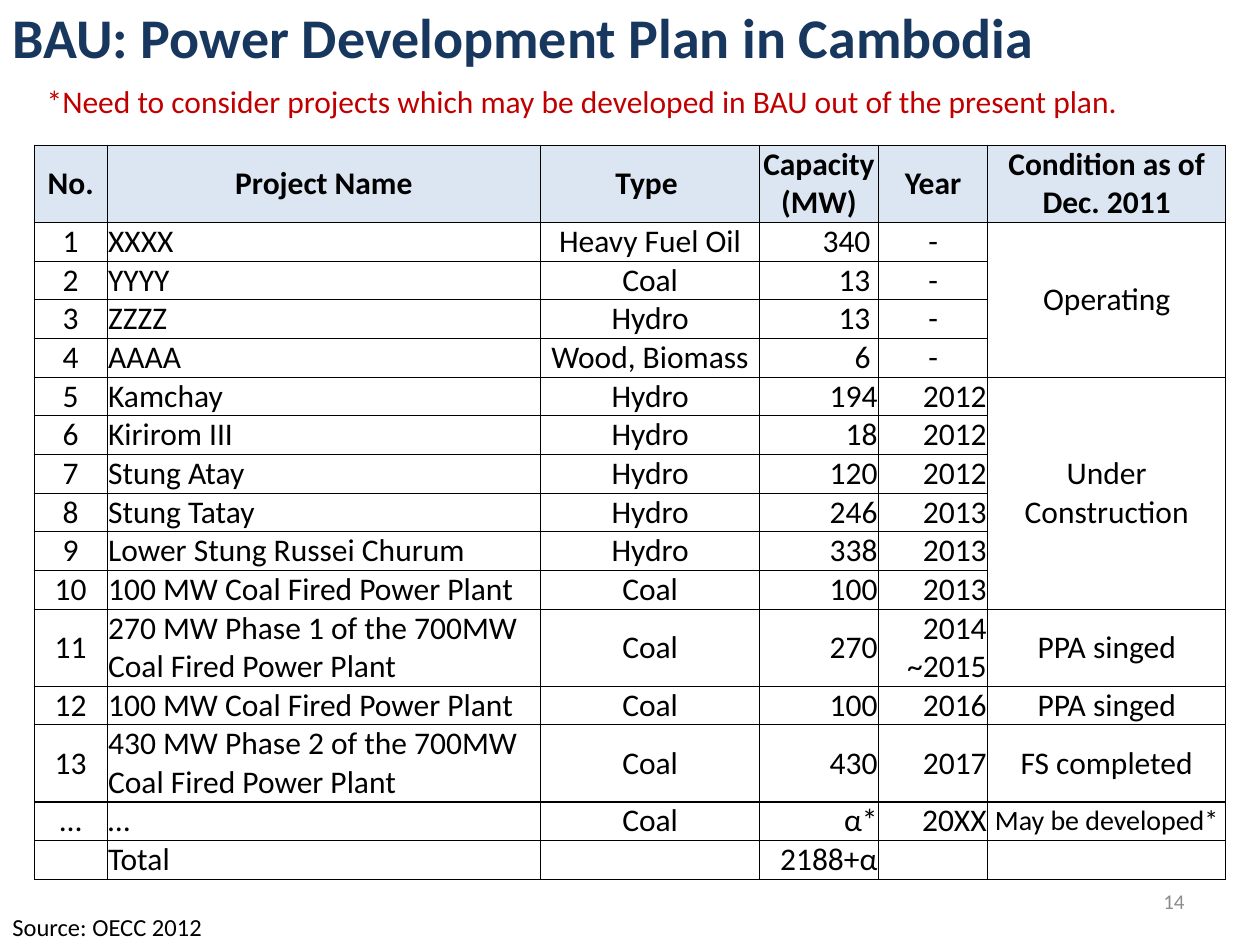
import pptx
import pptx.util
import pptx.dml.color
import pptx.enum.shapes
import pptx.enum.text
import pptx.oxml
import pptx.oxml.ns

Cm = pptx.util.Cm
Pt = pptx.util.Pt
ALIGN = pptx.enum.text.PP_ALIGN
MIDDLE = pptx.enum.text.MSO_ANCHOR.MIDDLE
TOP = pptx.enum.text.MSO_ANCHOR.TOP

colours = {
    "title": "17375E",
    "note": "C00000",
    "text": "000000",
    "number": "8C8C8C",
    "header": "DCE6F2",
    "page": "FFFFFF",
}


def rgb(name):
    return pptx.dml.color.RGBColor.from_string(colours[name])


def write(frame, text, align, colour, size, bold=False):
    frame.text = text
    formats = {"name": "Calibri", "size": Pt(size), "bold": bold}
    for para in frame.paragraphs:
        para.alignment = align
        for span in para.runs:
            for key, value in formats.items():
                setattr(span.font, key, value)
            span.font.color.rgb = rgb(colour)


deck = pptx.Presentation()
deck.slide_width = Cm(25.4)
deck.slide_height = Cm(19.05)
page = deck.slides.add_slide(deck.slide_layouts[6])

title = page.shapes.add_shape(
    pptx.enum.shapes.MSO_SHAPE.RECTANGLE, Cm(0), Cm(-0.08), Cm(25.4), Cm(1.63)
)
title.shadow.inherit = False
title.fill.solid()
title.fill.fore_color.rgb = rgb("page")
title.line.fill.background()
title.text_frame.vertical_anchor = MIDDLE
write(title.text_frame, "BAU: Power Development Plan in Cambodia", ALIGN.LEFT, "title", 32, True)

coal_plant = "100 MW Coal Fired Power Plant"
phase = "{} MW Phase {} of the 700MW Coal Fired Power Plant"
projects = [
    ("No.", "Project Name", "Type ", "Capacity\v(MW)", "Year", "Condition as of Dec. 2011"),
    ("1", "XXXX", "Heavy Fuel Oil", "340 ", "-", "Operating"),
    ("2", "YYYY", "Coal", "13 ", "-", ""),
    ("3", "ZZZZ", "Hydro", "13 ", "-", ""),
    ("4", "AAAA", "Wood, Biomass", "6 ", "-", ""),
    ("5", "Kamchay", "Hydro", "194", "2012", "Under\nConstruction"),
    ("6", "Kirirom III", "Hydro", "18", "2012", ""),
    ("7", "Stung Atay", "Hydro", "120", "2012", ""),
    ("8", "Stung Tatay", "Hydro", "246", "2013", ""),
    ("9", "Lower Stung Russei Churum", "Hydro", "338", "2013", ""),
    ("10", coal_plant, "Coal", "100", "2013", ""),
    ("11", phase.format(270, 1), "Coal", "270", "2014\n~2015", "PPA singed"),
    ("12", coal_plant, "Coal", "100", "2016", "PPA singed"),
    ("13", phase.format(430, 2), "Coal", "430", "2017", "FS completed"),
    ("…", "…", "Coal", "α*", "20XX", "May be developed*"),
    ("", "Total", "", "2188+α", "", ""),
]
widths = [1.47, 8.74, 4.41, 2.4, 2.2, 4.8]
tall_rows = {0, 11, 13}
heights = [1.53 if row in tall_rows else 0.78 for row in range(len(projects))]
aligns = [ALIGN.CENTER, ALIGN.LEFT, ALIGN.CENTER, ALIGN.RIGHT, ALIGN.RIGHT, ALIGN.CENTER]
cell_format = {
    "margin_left": Cm(0.02),
    "margin_right": Cm(0.02),
    "margin_top": Cm(0),
    "margin_bottom": Cm(0),
    "vertical_anchor": MIDDLE,
}

table = page.shapes.add_table(
    len(projects), len(widths), Cm(0.69), Cm(2.93), Cm(sum(widths)), Cm(sum(heights))
).table
for column, width in zip(table.columns, widths):
    column.width = Cm(width)
for line, height in zip(table.rows, heights):
    line.height = Cm(height)

for row, values in enumerate(projects):
    header = row == 0
    edges = {
        "L": 0.5,
        "R": 0.5,
        "T": 1 if row > 13 else 0.5,
        "B": 1 if row in (13, 14) else 0.5,
    }
    for col, value in enumerate(values):
        cell = table.cell(row, col)
        for key, setting in cell_format.items():
            setattr(cell, key, setting)
        centred = header or value == "-"
        size = 16 if value == "May be developed*" else 18
        write(cell.text_frame, value, ALIGN.CENTER if centred else aligns[col], "text", size, header)
        properties = cell._tc.get_or_add_tcPr()
        for side, weight in edges.items():
            properties.append(pptx.oxml.parse_xml(
                f'<a:ln{side} {pptx.oxml.ns.nsdecls("a")} w="{Pt(weight)}"><a:solidFill>'
                f'<a:srgbClr val="{colours["text"]}"/></a:solidFill></a:ln{side}>'
            ))
        if header:
            cell.fill.solid()
            cell.fill.fore_color.rgb = rgb("header")
        else:
            cell.fill.background()

for first, last in [(1, 4), (5, 10)]:
    table.cell(first, 5).merge(table.cell(last, 5))

note = "*Need to consider projects which may be developed in BAU out of the present plan."
labels = [
    ("14", 18.21, 17.65, 5.92, 1.02, ALIGN.RIGHT, MIDDLE, "number", 12),
    ("Source: OECC 2012", 0, 18.26, 23.7, 0.86, ALIGN.LEFT, TOP, "text", 14),
    (note, 0.69, 1.52, 24.21, 1.02, ALIGN.LEFT, MIDDLE, "note", 18),
]
for text, left, top, width, height, align, anchor, colour, size in labels:
    box = page.shapes.add_textbox(Cm(left), Cm(top), Cm(width), Cm(height))
    for key, setting in {"word_wrap": True, "vertical_anchor": anchor}.items():
        setattr(box.text_frame, key, setting)
    write(box.text_frame, text, align, colour, size)

deck.save("out.pptx")
